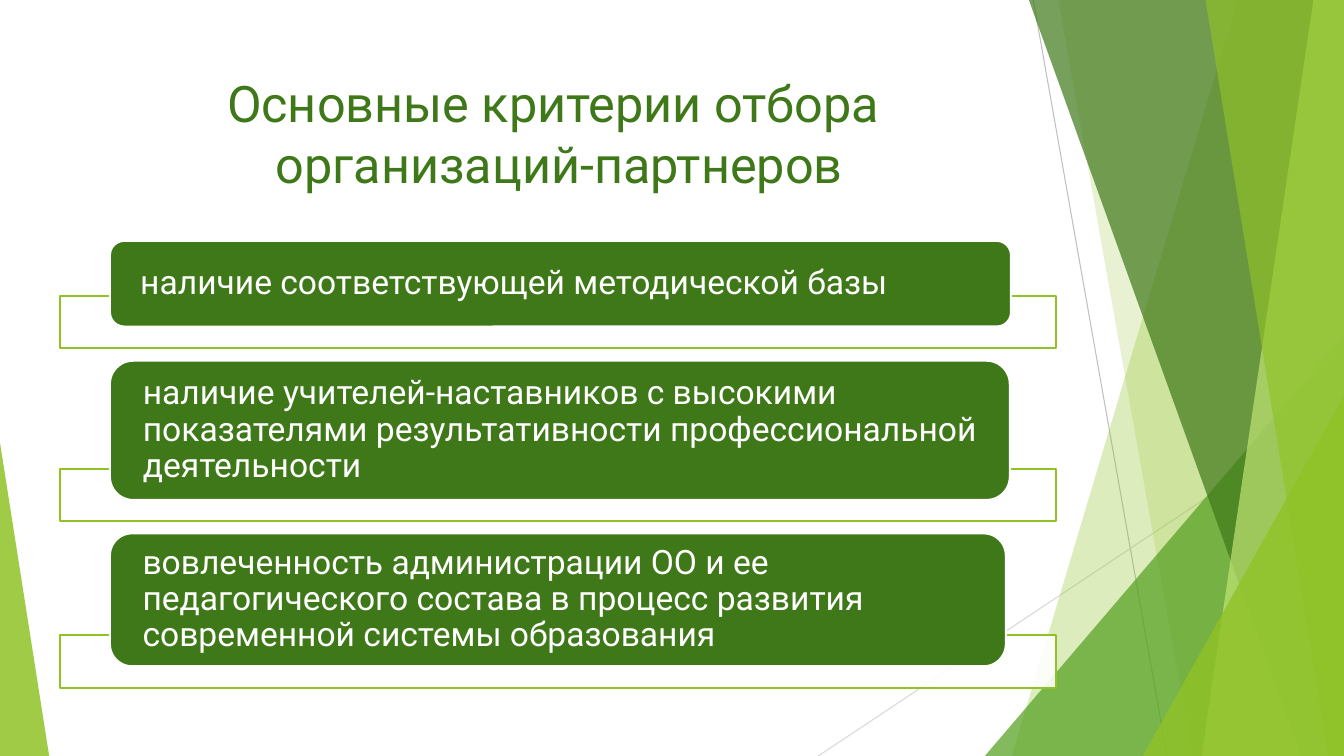
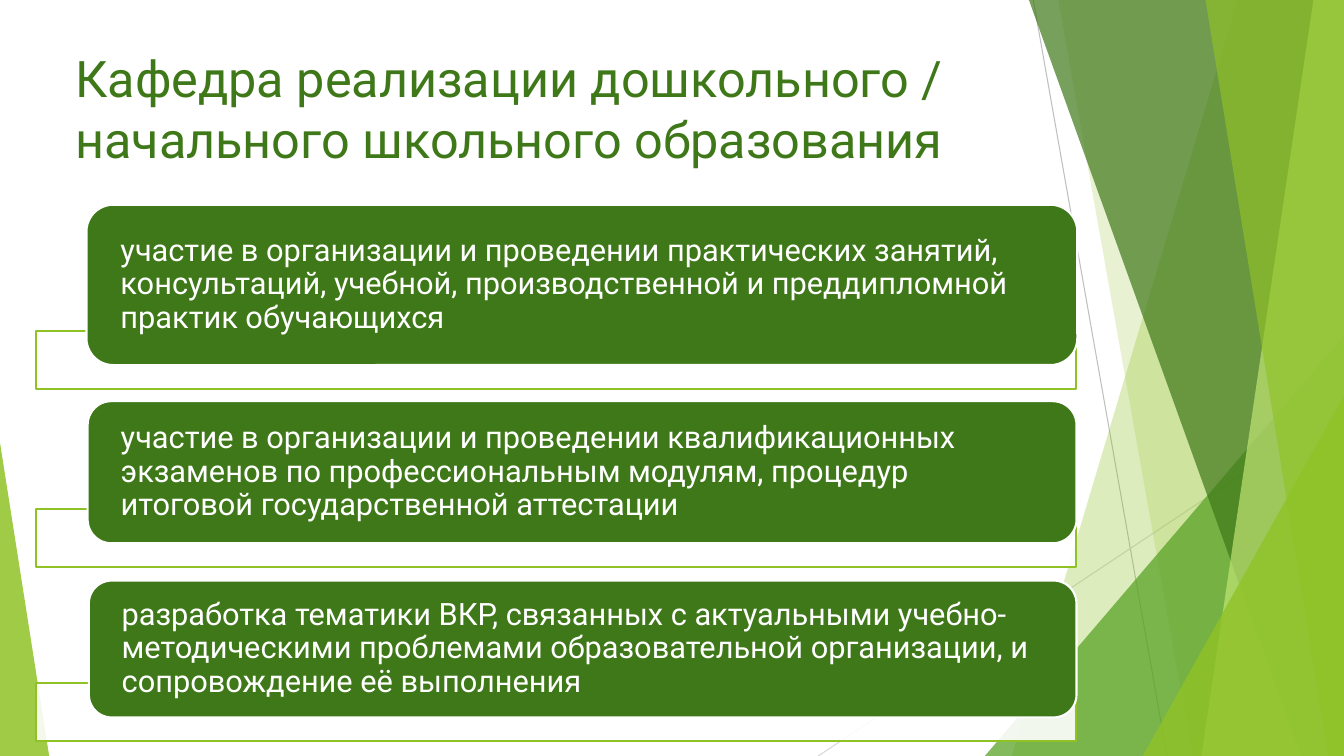
from lxml.etree import SubElement as Sub
from pptx import Presentation
from pptx.dml.color import RGBColor as Rgb
from pptx.enum.shapes import MSO_CONNECTOR as Link, MSO_SHAPE as Kind
from pptx.enum.text import MSO_ANCHOR as Anchor, PP_ALIGN as Align
from pptx.oxml.ns import qn
from pptx.util import Cm, Pt

WIDE, HIGH = 33.87, 19.05
HUES = {
    "lime": "90C226", "leaf": "54A021", "dark": "3F7819", "pale": "C0E474",
    "white": "FFFFFF", "grey": "BFBFBF", "mist": "D9D9D9",
}
RAYS = [
    ("grey", 26.04, 0, 29.41, HIGH),
    ("mist", WIDE, 10.24, 20.62, HIGH),
]
SHARDS = [
    ("band", "lime", 30, 31.19, 25.5),
    ("band", "lime", 20, 26.67, 30.05),
    ("peak", "leaf", 72, (24.82, 8.46, 9.05, 10.59), 1),
    ("band", "dark", 70, 25.93, 32.79),
    ("band", "pale", 70, 33.1, 30.28),
    ("band", "lime", 65, 30.38, 33.48),
    ("peak", "lime", 80, (28.8, 9.98, 5.07, 9.07), 1),
    ("peak", "lime", 85, (0, 11.15, 1.24, 7.9), 0),
]
PAGES = [
    {
        "title": "Основные критерии отбора \vорганизаций-партнеров",
        "box": (1.07, 1.7, 26.06, 3.66),
        "align": Align.CENTER,
        "tab": (1.52, 25.1, 1.32),
        "size": 24,
        "cards": [
            ((2.77, 6.07, 22.71, 2.16), "наличие соответствующей методической базы"),
            ((2.77, 9.09, 22.68, 3.51),
             "наличие учителей-наставников с высокими показателями "
             "результативности профессиональной деятельности"),
            ((2.77, 13.44, 22.58, 3.35),
             "вовлеченность администрации ОО и ее педагогического состава "
             "в процесс развития современной системы образования"),
        ],
    },
    {
        "title": "Кафедра реализации дошкольного / начального школьного образования",
        "box": (1.65, 1.07, 23.88, 3.66),
        "align": Align.LEFT,
        "tab": (0.91, 26.21, 1.47),
        "size": 22,
        "cards": [
            ((2.18, 5.16, 24.97, 4.04),
             "участие в организации и проведении практических занятий, "
             "консультаций, учебной, производственной и преддипломной "
             "практик обучающихся"),
            ((2.21, 10.11, 24.92, 3.58),
             "участие в организации и проведении квалификационных экзаменов "
             "по профессиональным модулям, процедур итоговой "
             "государственной аттестации"),
            ((2.24, 14.63, 24.89, 3.45),
             "разработка тематики ВКР, связанных с актуальными "
             "учебно-методическими проблемами образовательной организации, "
             "и сопровождение её выполнения"),
        ],
    },
]


def tint(name):
    return Rgb.from_string(HUES[name])


def dress(item, **looks):
    for key, value in looks.items():
        setattr(item, key, value)


class Deck:
    font = "Roboto"

    def __init__(self):
        self.file = Presentation()
        dress(self.file, slide_width=Cm(WIDE), slide_height=Cm(HIGH))
        self.blank = self.file.slide_layouts[6]
        self.slide = None

    def page(self):
        first = self.slide is None
        self.slide = self.file.slides.add_slide(self.blank)
        if first:
            self.decor()

    def decor(self):
        for ray in RAYS:
            self.ray(*ray)
        draw = {"band": self.band, "peak": self.peak}
        for kind, *args in SHARDS:
            draw[kind](*args)
        for shape in list(self.slide.shapes):
            self.blank.shapes.element.append(shape.element)

    def ray(self, hue, *ends):
        line = self.slide.shapes.add_connector(Link.STRAIGHT, *map(Cm, ends))
        line.line.color.rgb = tint(hue)
        line.line.width = Pt(0.75)
        Sub(line.element.spPr, qn("a:effectLst"))

    def paint(self, shape, hue, alpha=100, edge=None):
        shape.shadow.inherit = False
        shape.fill.solid()
        shape.fill.fore_color.rgb = tint(hue)
        if alpha < 100:
            color = shape.element.xpath("./p:spPr/a:solidFill/a:srgbClr")[0]
            Sub(color, qn("a:alpha"), val=str(alpha * 1000))
        if edge:
            shape.line.color.rgb = tint(edge)
            shape.line.width = Pt(1.5)
        else:
            shape.line.fill.background()

    def band(self, hue, alpha, top, base):
        pen = self.slide.shapes.build_freeform(Cm(top), 0)
        pen.add_line_segments([
            (Cm(WIDE), 0), (Cm(WIDE), Cm(HIGH)), (Cm(base), Cm(HIGH)),
        ])
        self.paint(pen.convert_to_shape(), hue, alpha)

    def shape(self, kind, box, *look):
        shape = self.slide.shapes.add_shape(kind, *map(Cm, box))
        self.paint(shape, *look)
        return shape

    def peak(self, hue, alpha, box, tip):
        self.shape(Kind.ISOSCELES_TRIANGLE, box, hue, alpha).adjustments[0] = tip

    def label(self, shape, text, hue, size, frame, para):
        body = shape.text_frame
        dress(body, word_wrap=True, **frame)
        body.text = text
        part = body.paragraphs[0]
        dress(part, **para)
        for run in part.runs:
            dress(run.font, name=self.font, size=Pt(size))
            run.font.color.rgb = tint(hue)

    def title(self, text, box, align):
        shape = self.slide.shapes.add_textbox(*map(Cm, box))
        self.label(shape, text, "dark", 36,
                   {"vertical_anchor": Anchor.TOP}, {"alignment": align})

    def card(self, box, text, size, tab):
        left, wide, high = tab
        top = box[1] + box[3] - 0.59 * high
        self.shape(Kind.RECTANGLE, (left, top, wide, high), "white", 90, "lime")
        shape = self.shape(Kind.ROUNDED_RECTANGLE, box, "dark", 100, "white")
        frame = {
            "vertical_anchor": Anchor.MIDDLE,
            "margin_left": Cm(0.66), "margin_right": Cm(0.64),
            "margin_top": 0, "margin_bottom": 0,
        }
        self.label(shape, text, "white", size, frame,
                   {"alignment": Align.LEFT, "line_spacing": 0.9})


def main():
    deck = Deck()
    for page in PAGES:
        deck.page()
        deck.title(page["title"], page["box"], page["align"])
        for box, text in page["cards"]:
            deck.card(box, text, page["size"], page["tab"])
    deck.file.save("out.pptx")


if __name__ == "__main__":
    main()
